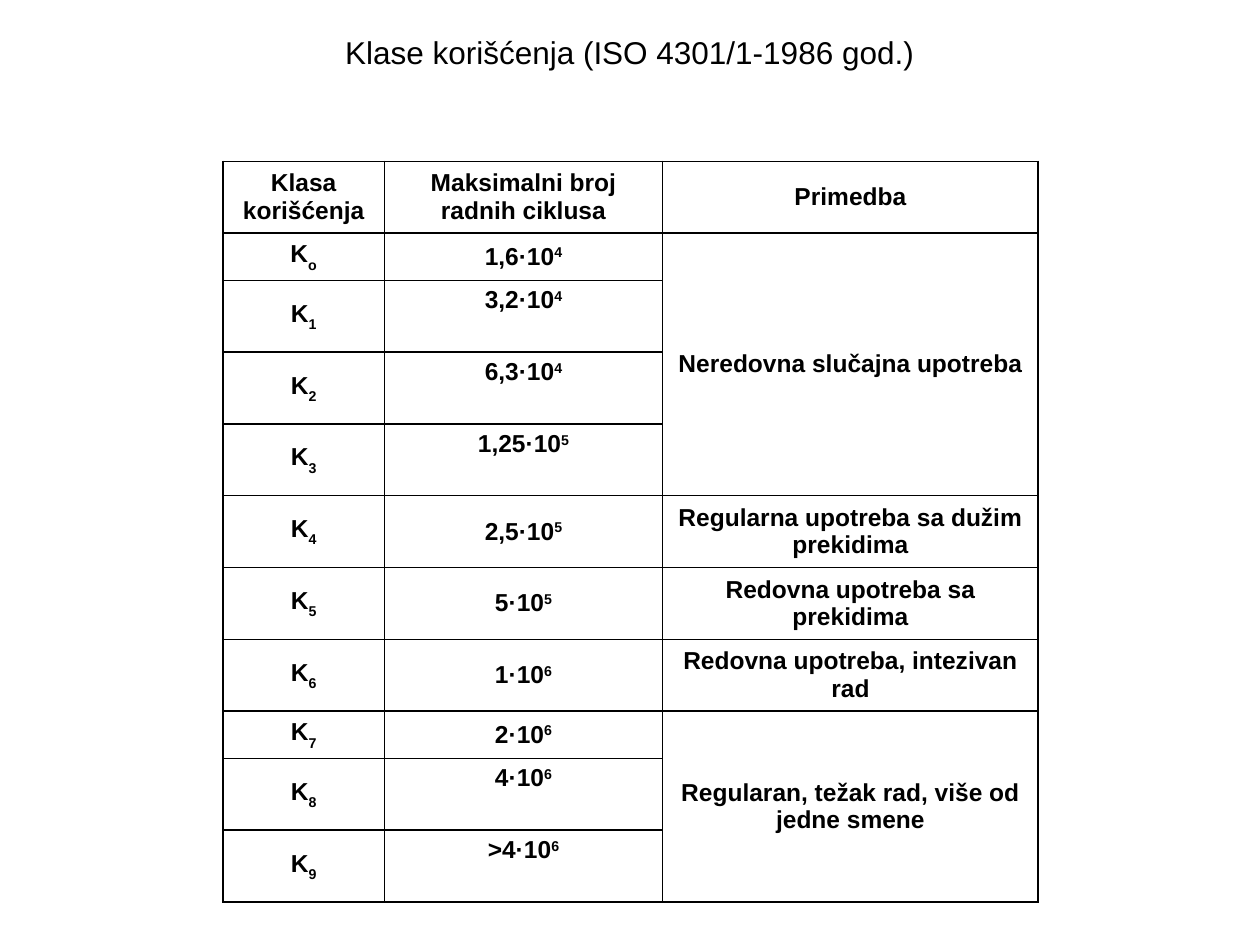
"""Builds a slide with a table of usage classes and their maximum numbers of cycles."""
import pptx
import pptx.dml.color
import pptx.enum.text
import pptx.oxml
import pptx.oxml.ns
import pptx.util

Inches = pptx.util.Inches
ALIGN = pptx.enum.text.PP_ALIGN
ANCHOR = pptx.enum.text.MSO_ANCHOR

COLORS = {"text": "000000", "border": "000000"}
TITLE = "Klase korišćenja (ISO 4301/1-1986 god.)"
HEADINGS = ["Klasa korišćenja", "Maksimalni broj radnih ciklusa", "Primedba"]
CLASSES = [
    ("o", "1,6·10", "4"),
    ("1", "3,2·10", "4"),
    ("2", "6,3·10", "4"),
    ("3", "1,25·10", "5"),
    ("4", "2,5·10", "5"),
    ("5", "5·10", "5"),
    ("6", "1·10", "6"),
    ("7", "2·10", "6"),
    ("8", "4·10", "6"),
    ("9", ">4·10", "6"),
]
REMARKS = [
    ("Neredovna slučajna upotreba", 4),
    ("Regularna upotreba sa dužim prekidima", 1),
    ("Redovna upotreba sa prekidima", 1),
    ("Redovna upotreba, intezivan rad", 1),
    ("Regularan, težak rad, više od jedne smene", 3),
]
COLUMNS = [1.28, 2.21, 2.98]
TALL, SHORT = 0.57, 0.37


def write(frame, text, size=14, bold=True, align=ALIGN.CENTER, anchor=ANCHOR.MIDDLE,
          script="", baseline=0):
    frame.vertical_anchor = anchor
    paragraph = frame.paragraphs[0]
    paragraph.alignment = align
    for part, shift in ((text, 0), (script, baseline)):
        if part:
            run = paragraph.add_run()
            run.text = part
            run.font.name = "Arial"
            run.font.size = pptx.util.Pt(size)
            run.font.bold = bold
            run.font.color.rgb = pptx.dml.color.RGBColor.from_string(COLORS["text"])
            if shift:
                run._r.get_or_add_rPr().set("baseline", str(shift * 1000))


def outline(cell):
    cell.fill.background()
    properties = cell._tc.get_or_add_tcPr()
    for position, side in enumerate(("lnL", "lnR", "lnT", "lnB")):
        properties.insert(position, pptx.oxml.parse_xml(
            f'<a:{side} {pptx.oxml.ns.nsdecls("a")} w="12700"><a:solidFill>'
            f'<a:srgbClr val="{COLORS["border"]}"/></a:solidFill></a:{side}>'))


def build_table(slide):
    first_rows, row = {}, 1
    for remark, span in REMARKS:
        first_rows[row] = (remark, span)
        row += span
    heights = [TALL] + [SHORT if first_rows.get(r, ("", 1))[1] > 1 else TALL
                        for r in range(1, row)]
    table = slide.shapes.add_table(
        row, len(COLUMNS), Inches(1.77), Inches(1.28),
        Inches(sum(COLUMNS)), Inches(sum(heights))).table
    table.first_row = table.horz_banding = False
    for column, width in zip(table.columns, COLUMNS):
        column.width = Inches(width)
    for table_row, height in zip(table.rows, heights):
        table_row.height = Inches(height)
    for cell in table.iter_cells():
        outline(cell)

    def fill(r, c, text, anchor=ANCHOR.MIDDLE, **style):
        cell = table.cell(r, c)
        write(cell.text_frame, text, anchor=None, **style)
        cell.vertical_anchor = anchor

    for c, heading in enumerate(HEADINGS):
        fill(0, c, heading)
    for r, (index, cycles, power) in enumerate(CLASSES, 1):
        under_remark = r not in first_rows
        fill(r, 0, "K", script=index, baseline=-30)
        fill(r, 1, cycles, script=power, baseline=30,
             anchor=ANCHOR.TOP if under_remark else ANCHOR.MIDDLE)
    for r, (remark, span) in first_rows.items():
        if span > 1:
            table.cell(r, 2).merge(table.cell(r + span - 1, 2))
        fill(r, 2, remark)


def main():
    deck = pptx.Presentation()
    deck.slide_width, deck.slide_height = Inches(10), Inches(7.5)
    slide = deck.slides.add_slide(deck.slide_layouts[6])
    title = slide.shapes.add_textbox(Inches(2.64), Inches(0.21), Inches(4.72), Inches(0.4))
    title.text_frame.word_wrap = False
    title.text_frame.auto_size = pptx.enum.text.MSO_AUTO_SIZE.SHAPE_TO_FIT_TEXT
    write(title.text_frame, TITLE, size=18, bold=False, align=ALIGN.LEFT)
    build_table(slide)
    deck.save("out.pptx")


if __name__ == "__main__":
    main()
